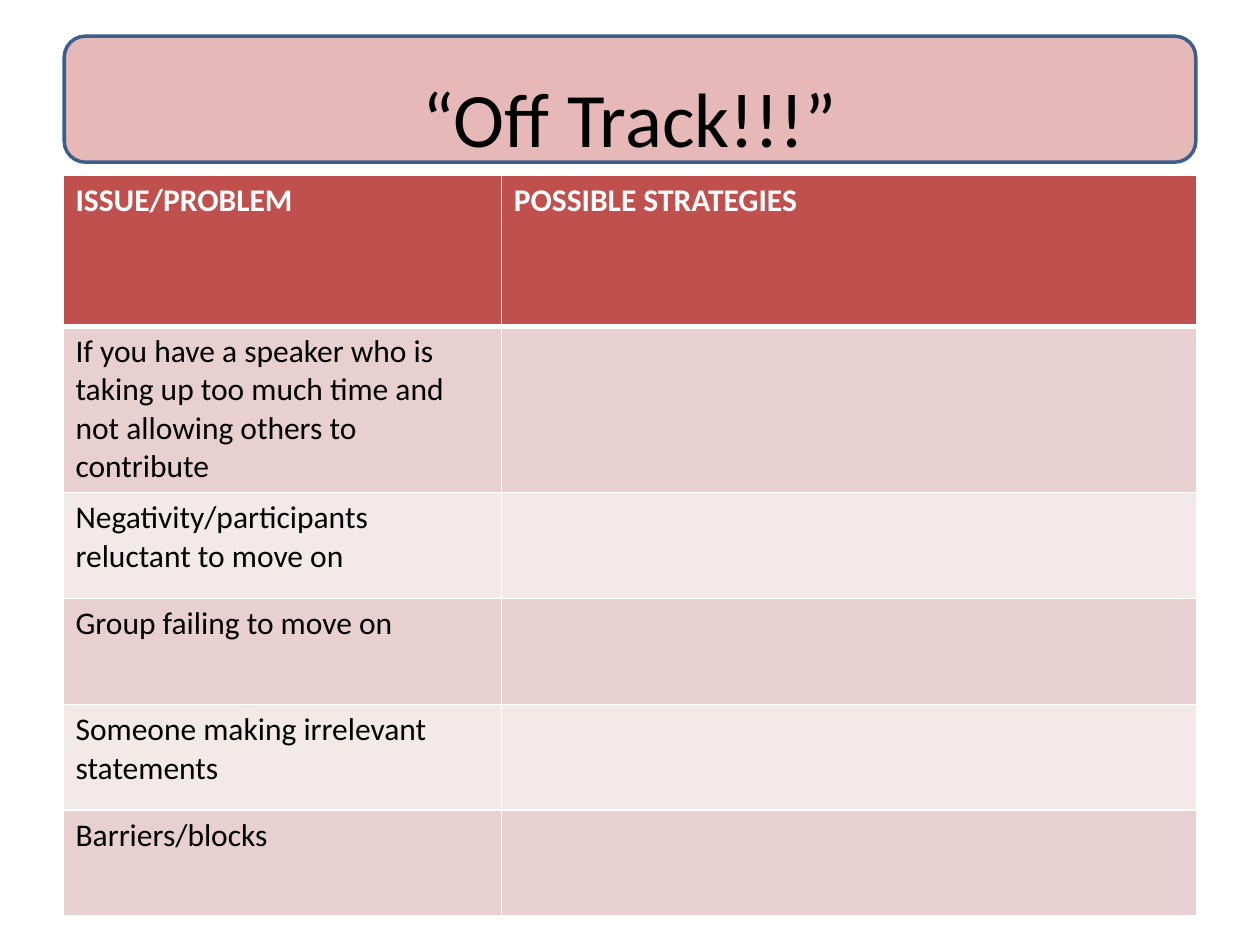
import pptx
import pptx.util
import pptx.dml.color
import pptx.enum.shapes
import pptx.enum.text
import pptx.oxml
import pptx.oxml.ns

Pt = pptx.util.Pt

# Content
TITLE = "“Off Track!!!”"
HEADS = ["ISSUE/PROBLEM", "POSSIBLE STRATEGIES"]
ISSUES = [
    "If you have a speaker who is taking up too much time and "
    "not allowing others to contribute",
    "Negativity/participants reluctant to move on",
    "Group failing to move on",
    "Someone making irrelevant statements",
    "Barriers/blocks",
]
HEX = {"pink": "E6B9B8", "blue": "3A5F8C", "red": "C0504D",
       "dark": "E8D0D0", "light": "F4E9E9",
       "white": "FFFFFF", "black": "000000"}

# Layout, in points
LEFT, TOP = 36, 100
COLS = [250.5, 397.5]
HEAD_H, ROW_H = 86.4, 60.5


def tint(name):
    return pptx.dml.color.RGBColor.from_string(HEX[name])


def paint(fill, name):
    fill.solid()
    fill.fore_color.rgb = tint(name)


def style(para, size, name, bold=False):
    font = para.font
    font.name, font.size, font.bold = "Calibri", Pt(size), bold
    font.color.rgb = tint(name)


def edge(cell, widths):
    props = cell._tc.get_or_add_tcPr()
    for side, width in widths.items():
        props.append(pptx.oxml.parse_xml(
            f'<a:ln{side} {pptx.oxml.ns.nsdecls("a")} w="{Pt(width)}">'
            f'<a:solidFill><a:srgbClr val="{HEX["white"]}"/></a:solidFill>'
            f'</a:ln{side}>'))


deck = pptx.Presentation()
deck.slide_width, deck.slide_height = Pt(720), Pt(540)
slide = deck.slides.add_slide(deck.slide_layouts[5])

# Banner behind the title
banner = slide.shapes.add_shape(
    pptx.enum.shapes.MSO_SHAPE.ROUNDED_RECTANGLE,
    Pt(36.7), Pt(20.7), Pt(646.6), Pt(72))
banner.shadow.inherit = False
paint(banner.fill, "pink")
banner.line.color.rgb = tint("blue")
banner.line.width = Pt(2)

# Title
title = slide.shapes.title
title.left, title.top = Pt(LEFT), Pt(21.6)
title.width, title.height = Pt(sum(COLS)), Pt(90)
frame = title.text_frame
frame.text = TITLE
frame.vertical_anchor = pptx.enum.text.MSO_ANCHOR.MIDDLE
frame.paragraphs[0].alignment = pptx.enum.text.PP_ALIGN.CENTER
style(frame.paragraphs[0], 44, "black")
banner.element.addnext(title.element)

# Table of issues, with the strategies left open
rows = [HEADS] + [[issue, ""] for issue in ISSUES]
table = slide.shapes.add_table(
    len(rows), len(COLS), Pt(LEFT), Pt(TOP), Pt(sum(COLS)),
    Pt(HEAD_H + ROW_H * len(ISSUES))).table
for col, width in zip(table.columns, COLS):
    col.width = Pt(width)
for r, texts in enumerate(rows):
    head = r == 0
    table.rows[r].height = Pt(HEAD_H if head else ROW_H)
    shade = "red" if head else "dark" if r % 2 else "light"
    for c, text in enumerate(texts):
        cell = table.cell(r, c)
        edge(cell, {"L": 1, "R": 1, "T": 3 if r == 1 else 1,
                    "B": 3 if head else 1})
        paint(cell.fill, shade)
        cell.text = text
        style(cell.text_frame.paragraphs[0], 18,
              "white" if head else "black", head)

deck.save("out.pptx")
